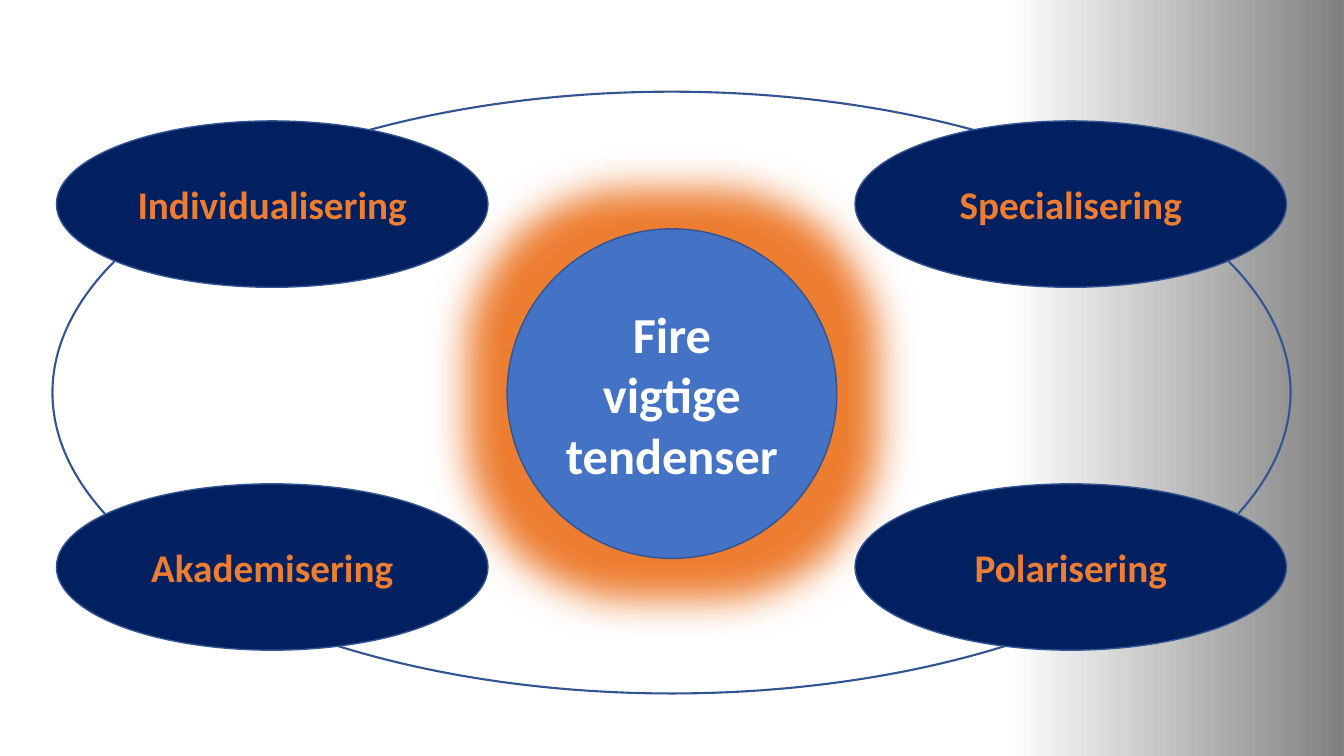
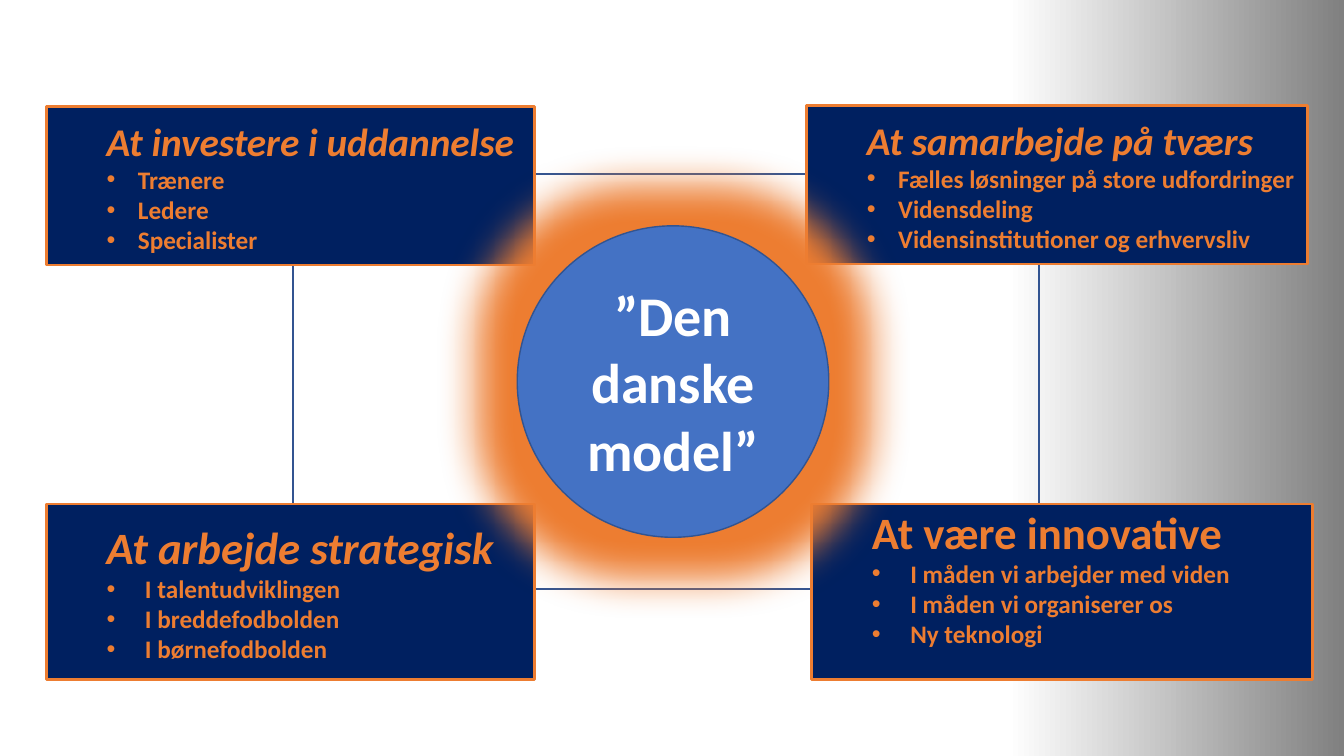
import pptx
import pptx.util
import pptx.dml.color
import pptx.enum.shapes
import pptx.enum.text
import pptx.oxml.ns
from lxml import etree

Inches = pptx.util.Inches
Pt = pptx.util.Pt
SHAPE = pptx.enum.shapes.MSO_SHAPE
ALIGN = pptx.enum.text.PP_ALIGN
qn = pptx.oxml.ns.qn

FONT = "Calibri"
NAVY, BLUE, EDGE = "002060", "4472C4", "325491"
ORANGE, WHITE, GRAY = "ED7D31", "FFFFFF", "808080"

TRENDS = [["Individualisering", "Specialisering"],
          ["Akademisering", "Polarisering"]]

CARDS = [
    (0.46, 1.06, 4.84, 1.57, 28, True, 0.31, "At investere i uddannelse",
     ["Trænere", "Ledere", "Specialister"]),
    (8, 1.05, 4.97, 1.57, 28, True, 0.31, "At samarbejde på tværs",
     ["Fælles løsninger på store udfordringer", "Vidensdeling",
      "Vidensinstitutioner og erhvervsliv"]),
    (0.46, 5, 4.84, 1.74, 32, True, 0.38, "At arbejde strategisk",
     ["I talentudviklingen", "I breddefodbolden", "I børnefodbolden"]),
    (8.05, 5, 4.97, 1.74, 32, False, 0.38, "At være innovative",
     ["I måden vi arbejder med viden", "I måden vi organiserer os",
      "Ny teknologi"]),
]


def color(code):
    """Return the colour for a hex string."""
    return pptx.dml.color.RGBColor.from_string(code)


def style(para, size, code, italic=False):
    """Set the bold font of a paragraph."""
    font = para.font
    font.name, font.size = FONT, Pt(size)
    font.bold, font.italic = True, italic
    font.color.rgb = color(code)


def draw(slide, kind, box, fill, line=EDGE, width=1):
    """Add a preset shape, hollow when fill is None."""
    shape = slide.shapes.add_shape(kind, *map(Inches, box))
    shape.shadow.inherit = False
    if fill:
        shape.fill.solid()
        shape.fill.fore_color.rgb = color(fill)
    else:
        shape.fill.background()
    shape.line.color.rgb = color(line)
    shape.line.width = Pt(width)
    return shape


def oval(slide, box, fill, text, size, code):
    """Add an ellipse with a centred label."""
    shape = draw(slide, SHAPE.OVAL, box, fill)
    para = shape.text_frame.paragraphs[0]
    para.text = text
    para.alignment = ALIGN.CENTER
    style(para, size, code)
    return shape


def hub(slide, left, top, side, text, size):
    """Add the glowing circle in the middle."""
    shape = oval(slide, (left, top, side, side), BLUE, text, size, WHITE)
    effects = shape._element.spPr.find(qn("a:effectLst"))
    glow = etree.SubElement(effects, qn("a:glow"), rad=str(Inches(0.8)))
    etree.SubElement(glow, qn("a:srgbClr"), val=ORANGE)


def indent(para, left, hang=0):
    """Indent a paragraph, with a bullet if it hangs."""
    para.level = 1
    para.alignment = ALIGN.LEFT
    props = para._p.get_or_add_pPr()
    props.set("marL", str(Inches(left)))
    props.set("indent", str(-Inches(hang)))
    if hang:
        etree.SubElement(props, qn("a:buFont"), typeface="Arial")
        etree.SubElement(props, qn("a:buChar"), char="•")


def card(slide, left, top, width, height, size, italic, hang, title, items):
    """Add a box with a heading and bullets."""
    shape = draw(slide, SHAPE.RECTANGLE, (left, top, width, height),
                 NAVY, ORANGE, 2)
    frame = shape.text_frame
    head = frame.paragraphs[0]
    head.text = title
    indent(head, 0.5)
    style(head, size, ORANGE, italic)
    for item in items:
        para = frame.add_paragraph()
        para.text = item
        indent(para, 0.5 + hang, hang)
        style(para, 18, ORANGE)
    return shape


def backdrop(deck):
    """Give all slides the fade from white to gray."""
    fill = deck.slide_master.background.fill
    fill.gradient()
    fill.gradient_angle = 0
    for stop, place, code in zip(fill.gradient_stops, (0.75, 1), (WHITE, GRAY)):
        stop.position = place
        stop.color.rgb = color(code)


def trends(slide):
    """Build the slide with four trends."""
    draw(slide, SHAPE.OVAL, (0.52, 0.91, 12.28, 5.97), None, width=1.5)
    hub(slide, 5.03, 2.27, 3.27, "Fire vigtige tendenser", 36)
    for row, names in enumerate(TRENDS):
        for col, name in enumerate(names):
            box = (0.56 + col * 7.92, 1.2 + row * 3.6, 4.28, 1.65)
            oval(slide, box, NAVY, name, 28, ORANGE)


def model(slide):
    """Build the slide with the four-part model."""
    draw(slide, SHAPE.RECTANGLE, (2.91, 1.73, 7.4, 4.11), None, width=1.5)
    boxes = [card(slide, *data) for data in CARDS]
    frame = boxes[-1].text_frame
    frame.margin_top, frame.margin_bottom = 0, Inches(0.3)
    hub(slide, 5.13, 2.24, 3.09, "”Den danske model”", 40)


def main():
    """Build and save the deck."""
    deck = pptx.Presentation()
    deck.slide_width, deck.slide_height = Inches(13.33), Inches(7.5)
    backdrop(deck)
    for build in (trends, model):
        build(deck.slides.add_slide(deck.slide_layouts[6]))
    deck.save("out.pptx")


if __name__ == "__main__":
    main()
